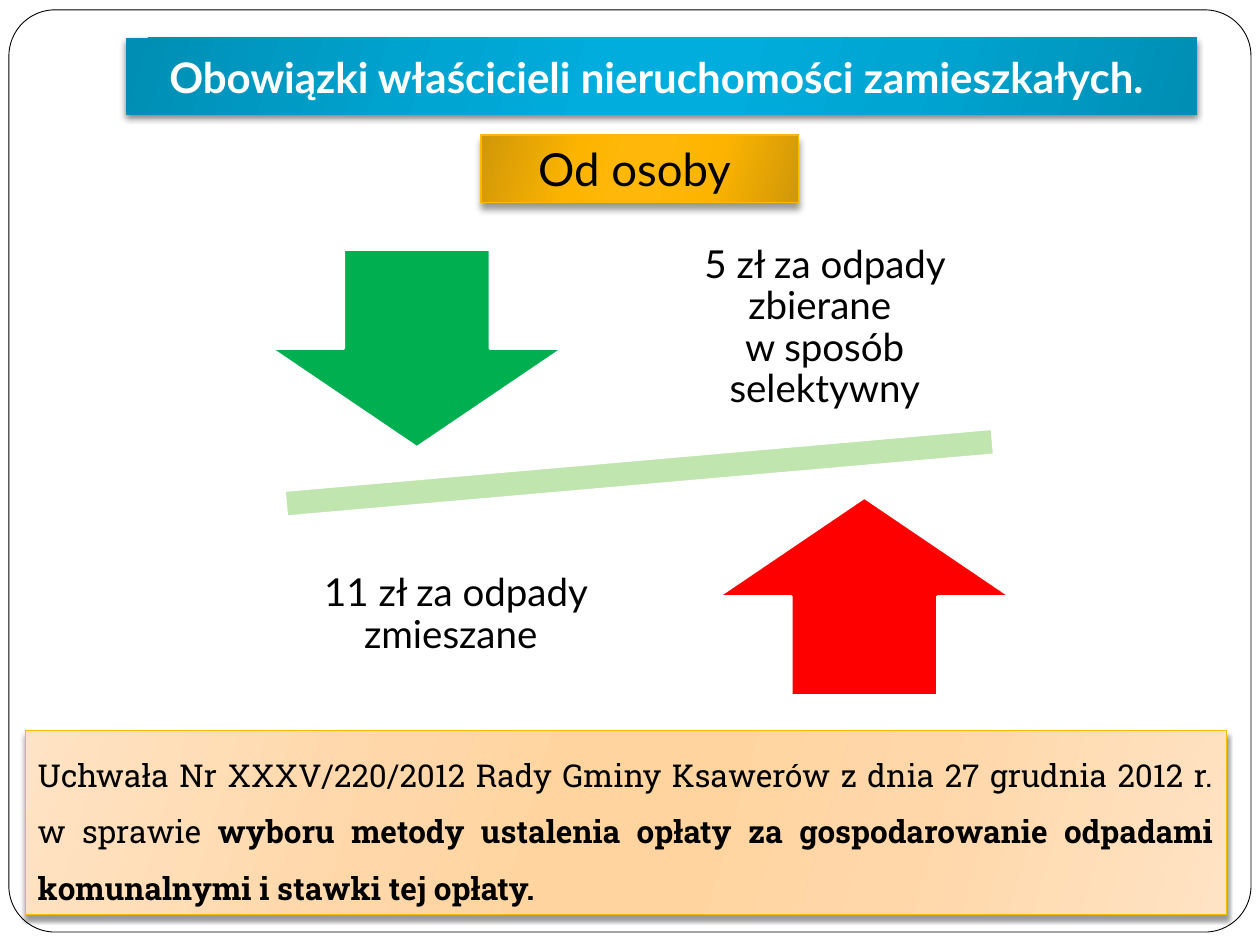
from dataclasses import dataclass

from lxml.etree import SubElement
from pptx import Presentation
from pptx.dml.color import RGBColor
from pptx.enum.shapes import MSO_SHAPE
from pptx.enum.text import MSO_ANCHOR, MSO_AUTO_SIZE, PP_ALIGN
from pptx.oxml.ns import qn
from pptx.util import Cm, Pt


@dataclass(frozen=True)
class Theme:
    white: str = "FFFFFF"
    black: str = "000000"
    green: str = "00B050"
    red: str = "FF0000"
    bar: str = "C0E5AF"
    border: str = "FEB80A"
    # Gradients run edge, shoulder, centre and back again
    blue_grad: tuple = ("008EB4", "00A5D2", "00ADDC")
    peach_grad: tuple = ("FFE3C4", "FFD7A9", "FFD49F")
    gold_grad: tuple = ("D09708", "FCB400", "FFB809")
    grad_stops: tuple = (0, 30, 45, 55, 73, 100)
    grad_angle: int = 16
    font: str = "Lato"
    serif: str = "Roboto Slab"
    title_size: int = 24
    method_size: int = 26
    rate_size: int = 22
    resolution_size: int = 18


THEME = Theme()


def add_shape(slide, kind, box, fill=None, line=None, width=0.75):
    s = slide.shapes.add_shape(kind, *(Cm(v) for v in box))
    s.shadow.inherit = False
    if fill:
        s.fill.solid()
        s.fill.fore_color.rgb = RGBColor.from_string(fill)
    if line:
        s.line.color.rgb = RGBColor.from_string(line)
        s.line.width = Pt(width)
    else:
        s.line.fill.background()
    return s


def add_color(parent, color):
    return SubElement(parent, qn("a:srgbClr"), val=color)


def set_gradient(s, colors):
    s.fill.gradient()
    grad = s.fill._xPr.find(qn("a:gradFill"))
    stops = grad.find(qn("a:gsLst"))
    for gs in list(stops):
        stops.remove(gs)
    for pos, color in zip(THEME.grad_stops, colors + colors[::-1]):
        add_color(SubElement(stops, qn("a:gs"), pos=str(pos * 1000)), color)
    grad.find(qn("a:lin")).set("ang", str(THEME.grad_angle * 60000))


def set_shadow(s, opacity, blur, dist):
    effects = s._element.spPr.find(qn("a:effectLst"))
    shadow = SubElement(effects, qn("a:outerShdw"), blurRad=str(Pt(blur)),
                        dist=str(Pt(dist)), dir="5400000", rotWithShape="0")
    SubElement(add_color(shadow, THEME.black), qn("a:alpha"), val=str(opacity * 1000))


def add_panel(slide, box, colors, shadow, line=None):
    s = add_shape(slide, MSO_SHAPE.RECTANGLE, box, line=line)
    set_gradient(s, colors)
    set_shadow(s, *shadow)
    return s


def write(s, text, size, color=THEME.black, font=THEME.font,
          align=PP_ALIGN.CENTER, anchor=MSO_ANCHOR.TOP):
    tf = s.text_frame
    tf.word_wrap = True
    tf.vertical_anchor = anchor
    p = tf.paragraphs[0]
    p.text = text
    p.alignment = align
    p.font.name = font
    p.font.size = Pt(size)
    p.font.color.rgb = RGBColor.from_string(color)
    return p


def add_rate(slide, left, top, text):
    s = slide.shapes.add_textbox(Cm(left), Cm(top), Cm(6.27), Cm(4.19))
    p = write(s, text, THEME.rate_size, anchor=MSO_ANCHOR.MIDDLE)
    p.line_spacing = 0.9
    tf = s.text_frame
    tf.margin_left = tf.margin_right = tf.margin_top = tf.margin_bottom = Cm(0.43)


def add_arrow(slide, kind, left, top, color):
    add_shape(slide, kind, (left, top, 5.89, 3.99), color, THEME.white, 1.5)


def add_title(slide):
    s = add_panel(slide, (2.54, 0.76, 21.59, 1.55), THEME.blue_grad, (50, 4, 2))
    p = write(s, "Obowiązki właścicieli nieruchomości zamieszkałych. ",
              THEME.title_size, THEME.white, anchor=MSO_ANCHOR.BOTTOM)
    p.font.bold = True
    s.text_frame.margin_bottom = Cm(0.25)


def add_balance(slide):
    bar = add_shape(slide, MSO_SHAPE.MATH_MINUS, (3.15, 8.41, 19.48, 2.24),
                    THEME.bar, THEME.white, 1.5)
    bar.rotation = 355
    add_arrow(slide, MSO_SHAPE.DOWN_ARROW, 5.46, 5.03, THEME.green)
    add_rate(slide, 13.49, 4.52, "5 zł za odpady zbierane \vw sposób selektywny")
    add_arrow(slide, MSO_SHAPE.UP_ARROW, 14.48, 10.03, THEME.red)
    add_rate(slide, 6.05, 10.31, "11 zł za odpady zmieszane ")


def add_resolution(slide):
    s = add_panel(slide, (0.51, 14.73, 24.21, 3.71), THEME.peach_grad,
                  (40, 3, 2), THEME.border)
    p = write(s, "Uchwała Nr XXXV/220/2012 Rady Gminy Ksawerów z dnia "
              "27 grudnia 2012 r. w sprawie ", THEME.resolution_size,
              font=THEME.serif, align=PP_ALIGN.JUSTIFY)
    p.line_spacing = 1.5
    r = p.add_run()
    r.text = ("wyboru metody ustalenia opłaty za gospodarowanie odpadami "
              "komunalnymi i stawki tej opłaty.")
    r.font.bold = True
    s.text_frame.auto_size = MSO_AUTO_SIZE.SHAPE_TO_FIT_TEXT


def add_method(slide):
    s = add_panel(slide, (9.7, 2.72, 6.4, 1.37), THEME.gold_grad,
                  (40, 4, 3.4), THEME.border)
    p = write(s, "Od osoby ", THEME.method_size)
    p.space_before = Pt(5.8)
    pPr = p._p.get_or_add_pPr()
    pPr.set("marL", str(Cm(0.76)))
    pPr.set("indent", str(-Cm(0.76)))
    s.text_frame.auto_size = MSO_AUTO_SIZE.SHAPE_TO_FIT_TEXT


def main():
    prs = Presentation()
    prs.slide_width, prs.slide_height = Cm(25.4), Cm(19.05)
    slide = prs.slides.add_slide(prs.slide_layouts[6])

    # Rounded page frame
    frame = add_shape(slide, MSO_SHAPE.ROUNDED_RECTANGLE,
                      (0.18, 0.2, 25.04, 18.59), THEME.white, THEME.black, 0.5)
    frame.adjustments[0] = 0.05

    # Heading, balance of the two rates, legal basis, charging method
    add_title(slide)
    add_balance(slide)
    add_resolution(slide)
    add_method(slide)
    prs.save("out.pptx")


if __name__ == "__main__":
    main()
